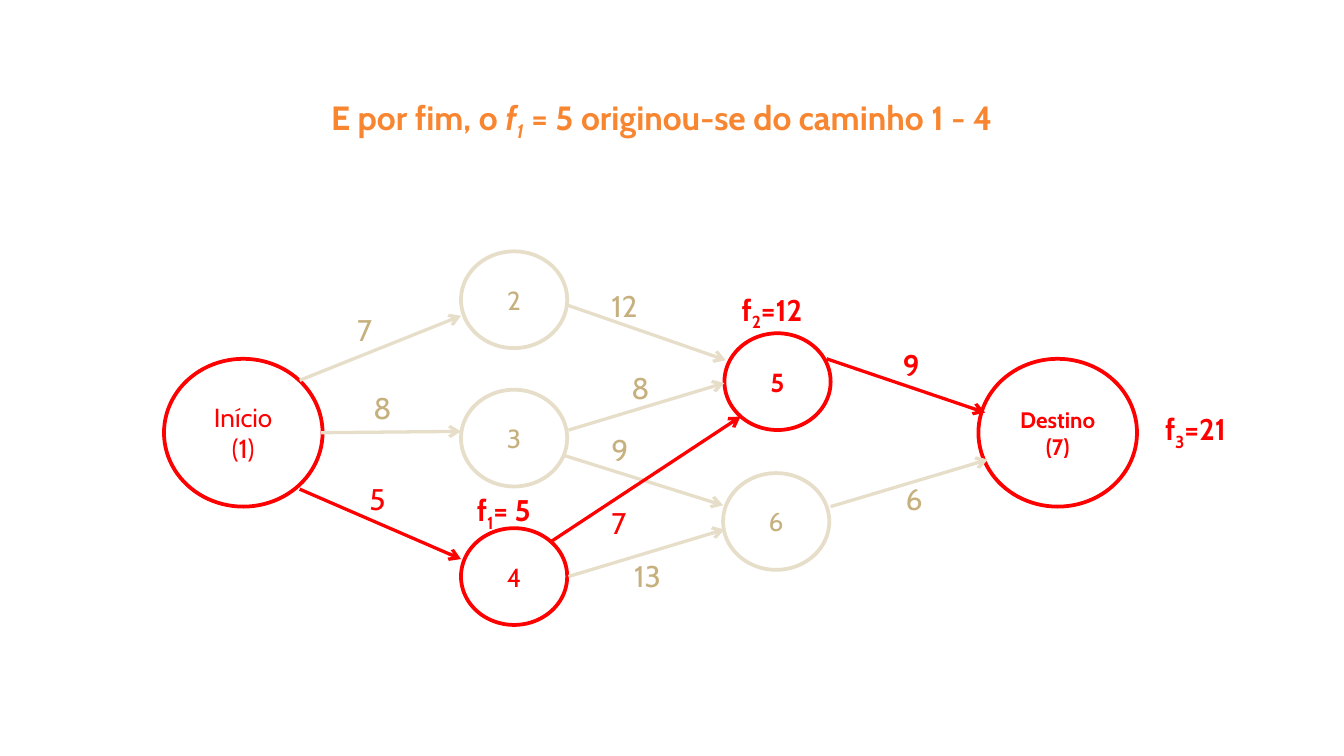
from pptx import Presentation, util as u
from pptx.dml.color import RGBColor
from pptx.enum import shapes, text
from pptx.oxml import ns
from lxml import etree

Inches = u.Inches
FONT = "Cabin"
COLORS = {
    "title": "F88631",
    "path": "FF0000",
    "idle_line": "E7DEC9",
    "idle_text": "C6B07E",
}
LARGE, SMALL = (1.18, 1.1), (0.79, 0.72)

# Nodes: text, left, top, size, on the best path, font size, bold
NODES = [
    ("Início\n(1)", 1.22, 2.67, LARGE, True, 14, False),
    ("Destino\n(7)", 7.28, 2.67, LARGE, True, 12, True),
    ("2", 3.43, 1.87, SMALL, False, 14, False),
    ("3", 3.43, 2.9, SMALL, False, 14, False),
    ("4", 3.43, 3.93, SMALL, True, 14, False),
    ("5", 5.39, 2.48, SMALL, True, 14, True),
    ("6", 5.38, 3.52, SMALL, False, 14, False),
]

# Edges: start, end, on the best path, cost, label position
EDGES = [
    ((2.23, 2.83), (3.43, 2.35), False, "7", (2.56, 2.27)),
    ((2.39, 3.22), (3.43, 3.21), False, "8", (2.68, 2.85)),
    ((2.23, 3.64), (3.43, 4.16), True, "5", (2.65, 3.53)),
    ((4.23, 3.2), (5.39, 2.85), False, "8", (4.6, 2.7)),
    ((4.2, 3.39), (5.38, 3.76), False, "9", (4.45, 3.16)),
    ((4.23, 4.29), (5.39, 3.94), False, "13", (4.62, 4.1)),
    ((4.22, 2.27), (5.4, 2.68), False, "12", (4.45, 2.09)),
    ((4.1, 4.03), (5.51, 3.1), True, "7", (4.45, 3.71)),
    ((6.18, 3.77), (7.35, 3.42), False, "6", (6.64, 3.53)),
    ((6.15, 2.67), (7.33, 3.07), True, "9", (6.62, 2.53)),
]
BOLD_EDGE = EDGES[-1]

# Accumulated costs: index, value, left, top
TOTALS = [
    ("2", "=12", 5.42, 2.12),
    ("3", "=21", 8.57, 3.01),
    ("1", "= 5", 3.45, 3.61),
]


def rgb(name):
    return RGBColor.from_string(COLORS[name])


def style_run(run, size, color, bold=False):
    run.font.name = FONT
    run.font.size = u.Pt(size)
    run.font.bold = bold
    run.font.color.rgb = rgb(color)


def add_run(paragraph, content, size, color, italic=False, subscript=False):
    run = paragraph.add_run()
    run.text = content
    style_run(run, size, color, bold=True)
    run.font.italic = italic
    if subscript:
        run._r.get_or_add_rPr().set("baseline", "-25000")


def set_title(slide):
    title = slide.shapes.title
    title.left, title.top = Inches(1.38), Inches(0.67)
    title.width, title.height = Inches(7.09), Inches(0.4)
    frame = title.text_frame
    frame.auto_size = text.MSO_AUTO_SIZE.NONE
    frame.vertical_anchor = text.MSO_ANCHOR.TOP
    paragraph = frame.paragraphs[0]
    paragraph.alignment = text.PP_ALIGN.CENTER
    add_run(paragraph, "E por fim, o ", 18, "title")
    add_run(paragraph, "f", 18, "title", italic=True)
    add_run(paragraph, "1", 18, "title", italic=True, subscript=True)
    add_run(paragraph, " = 5 originou-se do caminho 1 - 4", 18, "title")


def add_node(slide, label, left, top, size, on_path, font_size, bold):
    shape = slide.shapes.add_shape(
        shapes.MSO_SHAPE.OVAL, Inches(left), Inches(top), *map(Inches, size))
    shape.shadow.inherit = False
    shape.fill.background()
    shape.line.color.rgb = rgb("path" if on_path else "idle_line")
    shape.line.width = u.Pt(2)
    frame = shape.text_frame
    frame.text = label
    frame.vertical_anchor = text.MSO_ANCHOR.MIDDLE
    for paragraph in frame.paragraphs:
        paragraph.alignment = text.PP_ALIGN.CENTER
        style_run(paragraph.runs[0], font_size,
                  "path" if on_path else "idle_text", bold)


def add_arrow(slide, start, end, on_path):
    connector = slide.shapes.add_connector(
        shapes.MSO_CONNECTOR.STRAIGHT, *map(Inches, start + end))
    connector.line.color.rgb = rgb("path" if on_path else "idle_line")
    connector.line.width = u.Pt(1.75)
    line = connector.line._get_or_add_ln()
    etree.SubElement(line, ns.qn("a:tailEnd"), type="arrow")
    etree.SubElement(connector._element.spPr, ns.qn("a:effectLst"))


def add_text_box(slide, left, top, width):
    box = slide.shapes.add_textbox(
        Inches(left), Inches(top), Inches(width), Inches(0.37))
    box.text_frame.word_wrap = True
    return box.text_frame.paragraphs[0]


def add_cost(slide, cost, position, on_path, bold):
    paragraph = add_text_box(slide, *position, 0.27 * len(cost))
    paragraph.text = cost
    style_run(paragraph.runs[0], 16, "path" if on_path else "idle_text", bold)


def add_total(slide, index, value, left, top):
    paragraph = add_text_box(slide, left, top, 0.92)
    add_run(paragraph, "f", 16, "path")
    add_run(paragraph, index, 16, "path", subscript=True)
    add_run(paragraph, value, 16, "path")


def main():
    # Widescreen 16:9 slide
    presentation = Presentation()
    presentation.slide_width = Inches(10)
    presentation.slide_height = presentation.slide_width * 9 // 16
    slide = presentation.slides.add_slide(presentation.slide_layouts[5])

    set_title(slide)
    # Network
    for node in NODES:
        add_node(slide, *node)
    for start, end, on_path, _, _ in EDGES:
        add_arrow(slide, start, end, on_path)
    # Labels
    for edge in EDGES:
        _, _, on_path, cost, position = edge
        add_cost(slide, cost, position, on_path, edge is BOLD_EDGE)
    for total in TOTALS:
        add_total(slide, *total)

    presentation.save("out.pptx")


if __name__ == "__main__":
    main()
